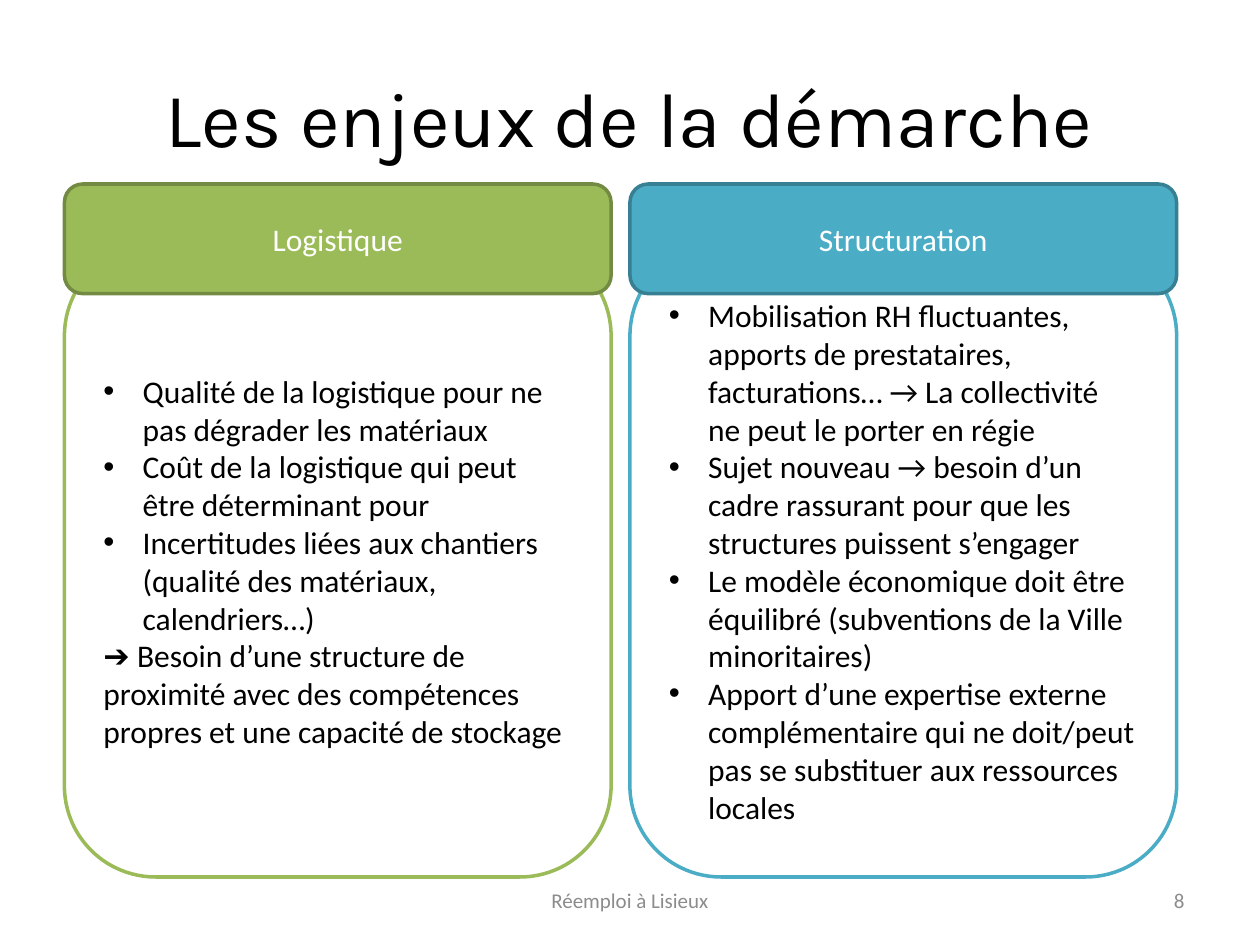
from lxml.etree import SubElement
from pptx import Presentation
from pptx.dml.color import RGBColor
from pptx.enum.shapes import MSO_SHAPE
from pptx.enum.text import MSO_ANCHOR, PP_ALIGN
from pptx.oxml.ns import qn
from pptx.util import Cm, Pt

COLUMN_WIDTH = 11.02
COLUMNS = [
    (1.3, "Logistique", "9BBB59", "738A42", [
        "Qualité de la logistique pour ne pas dégrader les matériaux",
        "Coût de la logistique qui peut être déterminant pour",
        "Incertitudes liées aux chantiers (qualité des matériaux, calendriers…)",
    ], ["➔ Besoin d’une structure de proximité avec des compétences propres "
        "et une capacité de stockage"]),
    (12.7, "Structuration", "4BACC6", "377F92", [
        "Mobilisation RH fluctuantes, apports de prestataires, facturations… "
        "→ La collectivité ne peut le porter en régie",
        "Sujet nouveau → besoin d’un cadre rassurant pour que les structures "
        "puissent s’engager",
        "Le modèle économique doit être équilibré (subventions de la Ville "
        "minoritaires)",
        "Apport d’une expertise externe complémentaire qui ne doit/peut pas se "
        "substituer aux ressources locales",
    ], []),
]


def color(value):
    """Return the colour for a hex string."""
    return RGBColor.from_string(value)


def write(shape, lines, size, ink, align, font="Calibri"):
    """Fill a shape with one paragraph per line, centred vertically."""
    frame = shape.text_frame
    frame.word_wrap = True
    frame.vertical_anchor = MSO_ANCHOR.MIDDLE
    frame.text = "\n".join(lines)
    for paragraph in frame.paragraphs:
        paragraph.alignment = align
        for span in paragraph.runs:
            span.font.name = font
            span.font.size = Pt(size)
            span.font.color.rgb = color(ink)


def add_bullet(paragraph):
    """Give a paragraph a hanging round bullet."""
    properties = paragraph._p.get_or_add_pPr()
    properties.set("marL", str(Cm(0.79)))
    properties.set("indent", str(-Cm(0.79)))
    SubElement(properties, qn("a:buFont")).set("typeface", "Arial")
    SubElement(properties, qn("a:buChar")).set("char", "•")


def add_panel(page, left, top, height, fill, line):
    """Add a rounded rectangle as wide as a column."""
    panel = page.shapes.add_shape(MSO_SHAPE.ROUNDED_RECTANGLE, Cm(left), Cm(top),
                                  Cm(COLUMN_WIDTH), Cm(height))
    panel.shadow.inherit = False
    panel.fill.solid()
    panel.fill.fore_color.rgb = color(fill)
    panel.line.color.rgb = color(line)
    panel.line.width = Pt(2)
    return panel


def add_column(page, left, heading, fill, border, bullets, conclusion):
    """Add a bulleted panel topped by its coloured heading."""
    body = add_panel(page, left, 4.93, 12.75, "FFFFFF", fill)
    write(body, bullets + conclusion, 18, "000000", PP_ALIGN.LEFT)
    for paragraph in body.text_frame.paragraphs[:len(bullets)]:
        add_bullet(paragraph)
    header = add_panel(page, left, 3.71, 2.21, fill, border)
    write(header, [heading], 18, "FFFFFF", PP_ALIGN.CENTER)


def add_label(page, left, top, width, height, text, size, ink, align, font="Calibri"):
    """Add a one-line text box."""
    box = page.shapes.add_textbox(Cm(left), Cm(top), Cm(width), Cm(height))
    write(box, [text], size, ink, align, font)


def main():
    """Build the slide and save it."""
    deck = Presentation()
    deck.slide_width, deck.slide_height = Cm(25.4), Cm(19.05)
    page = deck.slides.add_slide(deck.slide_layouts[6])
    for column in COLUMNS:
        add_column(page, *column)
    add_label(page, 1.27, 0.76, 22.86, 3.18, "Les enjeux de la démarche", 44,
              "000000", PP_ALIGN.CENTER, "Karla")
    add_label(page, 8.68, 17.65, 8.04, 1.01, "Réemploi à Lisieux", 12,
              "8C8C8C", PP_ALIGN.CENTER)
    add_label(page, 18.2, 17.65, 5.93, 1.01, "8", 12, "8C8C8C", PP_ALIGN.RIGHT)
    deck.save("out.pptx")


if __name__ == "__main__":
    main()
